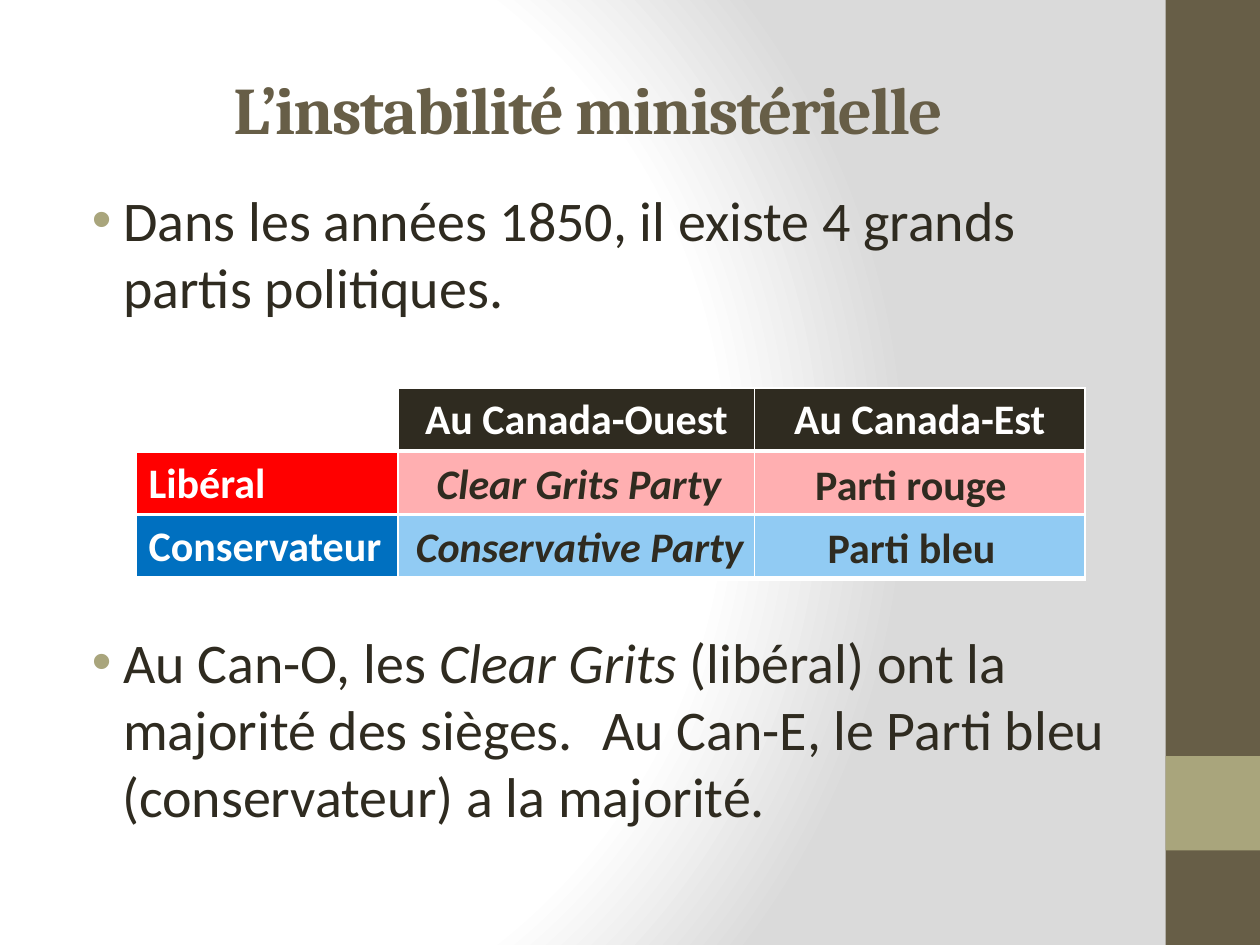
"""Build a slide on ministerial instability and the parties of the 1850s."""
import pptx
import pptx.util
import pptx.dml.color
import pptx.enum.shapes
import pptx.enum.text
import pptx.oxml
import pptx.oxml.ns
import lxml.etree

Inches, Pt = pptx.util.Inches, pptx.util.Pt
ALIGN = pptx.enum.text.PP_ALIGN
ANCHOR = pptx.enum.text.MSO_ANCHOR
qn = pptx.oxml.ns.qn

THEME = {
    "ink": "2F2B20", "brown": "675E47", "sage": "A9A57C", "white": "FFFFFF", "grey": "DADADA",
    "red": "FF0000", "pink": "FFAFB1", "blue": "0070C0", "sky": "91CBF3",
    "heading_font": "Cambria", "body_font": "Calibri",
    "title_size": 38, "body_size": 32, "table_size": 24,
}

TITLE = "L’instabilité ministérielle"
BANDS = [((9.25, 0, 0.75, 7.5), "brown"), ((9.25, 6, 0.75, 0.75), "sage")]
STATEMENTS = [
    {"at": (0.5, 1.42), "margin": 0.38, "indent": -0.25, "bullet": True,
     "spans": [("Dans les années 1850, il existe 4 grands partis politiques.", False)]},
    {"at": (0.5, 4.93), "margin": 0.38, "indent": -0.25, "bullet": True,
     "spans": [("Au Can-O, les ", False), ("Clear Grits ", True),
               ("(libéral) ont la majorité des sièges.", False)]},
    {"at": (0.75, 5.46), "margin": 0.12, "indent": 3.81, "bullet": False,
     "spans": [("Au Can-E, le Parti bleu (conservateur) a la majorité.", False)]},
]
COLUMNS = [2.08, 2.83, 2.62]
TABLE_LEFT, ROW_HEIGHT = 1.08, 0.5
TABLES = [
    {"top": 3.59, "first": 0, "align": ALIGN.LEFT,
     "cells": [("Libéral", "red"), ("", "pink"), ("", "pink")]},
    {"top": 4.09, "first": 0, "align": ALIGN.LEFT,
     "cells": [("Conservateur", "blue"), ("", "sky"), ("", "sky")]},
    {"top": 3.08, "first": 1, "align": ALIGN.CENTER,
     "cells": [("Au Canada-Ouest", "ink"), ("Au Canada-Est", "ink")]},
]
PARTIES = [
    ("Clear Grits Party", (3.36, 3.58, 2.47, 0.5), True),
    ("Parti rouge", (6.36, 3.59, 1.74, 0.5), False),
    ("Conservative Party", (3.19, 4.08, 2.82, 0.5), True),
    ("Parti bleu", (6.46, 4.09, 1.55, 0.5), False),
]


def color(name):
    return pptx.dml.color.RGBColor.from_string(THEME[name])


def style(span, size, ink="ink", font="body_font", bold=False, italic=False):
    span.font.name = THEME[font]
    span.font.size = Pt(THEME[size])
    span.font.color.rgb = color(ink)
    span.font.bold = bold
    span.font.italic = italic


def paint_background(slide):
    slide.background.fill.solid()
    holder = slide.element.find(".//" + qn("p:bgPr"))
    stops = "".join(
        f'<a:gs pos="{position * 1000}"><a:srgbClr val="{THEME[name]}"/></a:gs>'
        for position, name in [(0, "white"), (75, "white"), (100, "grey")])
    gradient = pptx.oxml.parse_xml(
        f'<a:gradFill {pptx.oxml.ns.nsdecls("a")} rotWithShape="1"><a:gsLst>{stops}</a:gsLst>'
        '<a:path path="circle"><a:fillToRect l="20000" t="50000" r="100000" b="50000"/></a:path>'
        '</a:gradFill>')
    holder.replace(holder.find(qn("a:solidFill")), gradient)


def add_band(slide, place, fill):
    band = slide.shapes.add_shape(pptx.enum.shapes.MSO_SHAPE.RECTANGLE, *map(Inches, place))
    band.shadow.inherit = False
    band.fill.solid()
    band.fill.fore_color.rgb = color(fill)
    band.line.fill.background()


def write_title(slide):
    title = slide.shapes.title
    title.left, title.top, title.width, title.height = map(Inches, (0.33, 0.33, 8.67, 1.05))
    title.text_frame.text = TITLE
    title.text_frame.vertical_anchor = ANCHOR.MIDDLE
    para = title.text_frame.paragraphs[0]
    para.alignment = ALIGN.CENTER
    style(para.runs[0], "title_size", "brown", "heading_font", bold=True)
    para.runs[0].font._element.set("spc", "-100")


def add_statement(slide, statement):
    box = slide.shapes.add_textbox(*map(Inches, (*statement["at"], 8.42, 1.33)))
    box.text_frame.word_wrap = True
    para = box.text_frame.paragraphs[0]
    for text, italic in statement["spans"]:
        span = para.add_run()
        span.text = text
        style(span, "body_size", italic=italic)
    settings = para._p.get_or_add_pPr()
    settings.set("marL", str(Inches(statement["margin"])))
    settings.set("indent", str(Inches(statement["indent"])))
    if statement["bullet"]:
        tint = lxml.etree.SubElement(settings, qn("a:buClr"))
        lxml.etree.SubElement(tint, qn("a:srgbClr"), val=THEME["sage"])
        lxml.etree.SubElement(settings, qn("a:buFont"), typeface="Arial")
        lxml.etree.SubElement(settings, qn("a:buChar"), char="•")


def set_borders(cell):
    settings = cell._tc.get_or_add_tcPr()
    for side, weight in [("L", 1), ("R", 1), ("T", 1), ("B", 3)]:
        line = lxml.etree.SubElement(settings, qn(f"a:ln{side}"), w=str(Pt(weight)))
        fill = lxml.etree.SubElement(line, qn("a:solidFill"))
        lxml.etree.SubElement(fill, qn("a:srgbClr"), val=THEME["white"])


def add_party_row(slide, row):
    first = row["first"]
    widths = COLUMNS[first:]
    place = (TABLE_LEFT + sum(COLUMNS[:first]), row["top"], sum(widths), ROW_HEIGHT)
    table = slide.shapes.add_table(1, len(widths), *map(Inches, place)).table
    table.first_row = table.horz_banding = False
    for index, (width, (text, fill)) in enumerate(zip(widths, row["cells"])):
        table.columns[index].width = Inches(width)
        cell = table.cell(0, index)
        set_borders(cell)
        cell.fill.solid()
        cell.fill.fore_color.rgb = color(fill)
        cell.text_frame.text = text
        para = cell.text_frame.paragraphs[0]
        para.alignment = row["align"]
        for span in para.runs:
            style(span, "table_size", "white", bold=True)


def add_party(slide, name, place, italic):
    box = slide.shapes.add_textbox(*map(Inches, place))
    frame = box.text_frame
    frame.text = name
    frame.word_wrap = False
    frame.auto_size = pptx.enum.text.MSO_AUTO_SIZE.SHAPE_TO_FIT_TEXT
    para = frame.paragraphs[0]
    para.alignment = ALIGN.CENTER
    style(para.runs[0], "table_size", bold=True, italic=italic)


def main():
    deck = pptx.Presentation()
    deck.slide_width, deck.slide_height = Inches(10), Inches(7.5)
    slide = deck.slides.add_slide(deck.slide_layouts.get_by_name("Title Only"))
    paint_background(slide)
    for place, fill in BANDS:
        add_band(slide, place, fill)
    write_title(slide)
    for statement in STATEMENTS:
        add_statement(slide, statement)
    for row in TABLES:
        add_party_row(slide, row)
    for party in PARTIES:
        add_party(slide, *party)
    deck.save("out.pptx")


if __name__ == "__main__":
    main()
